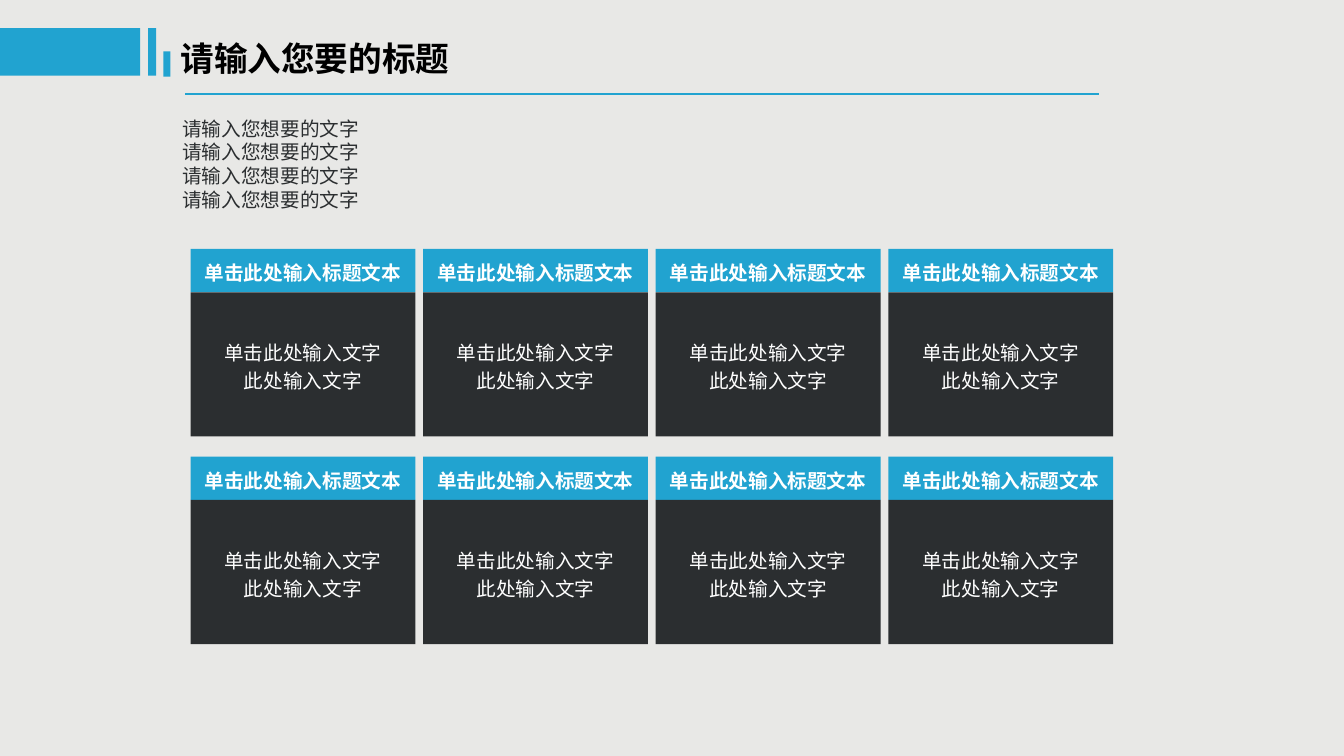
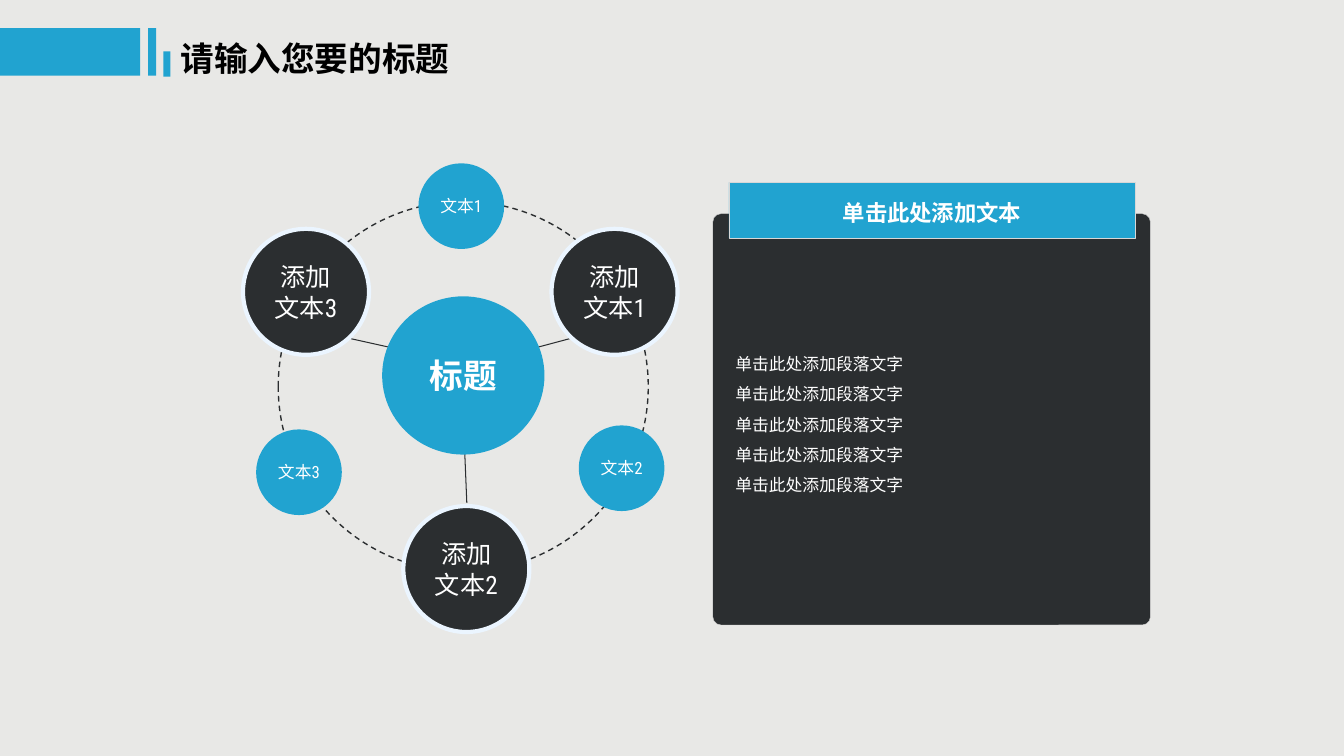
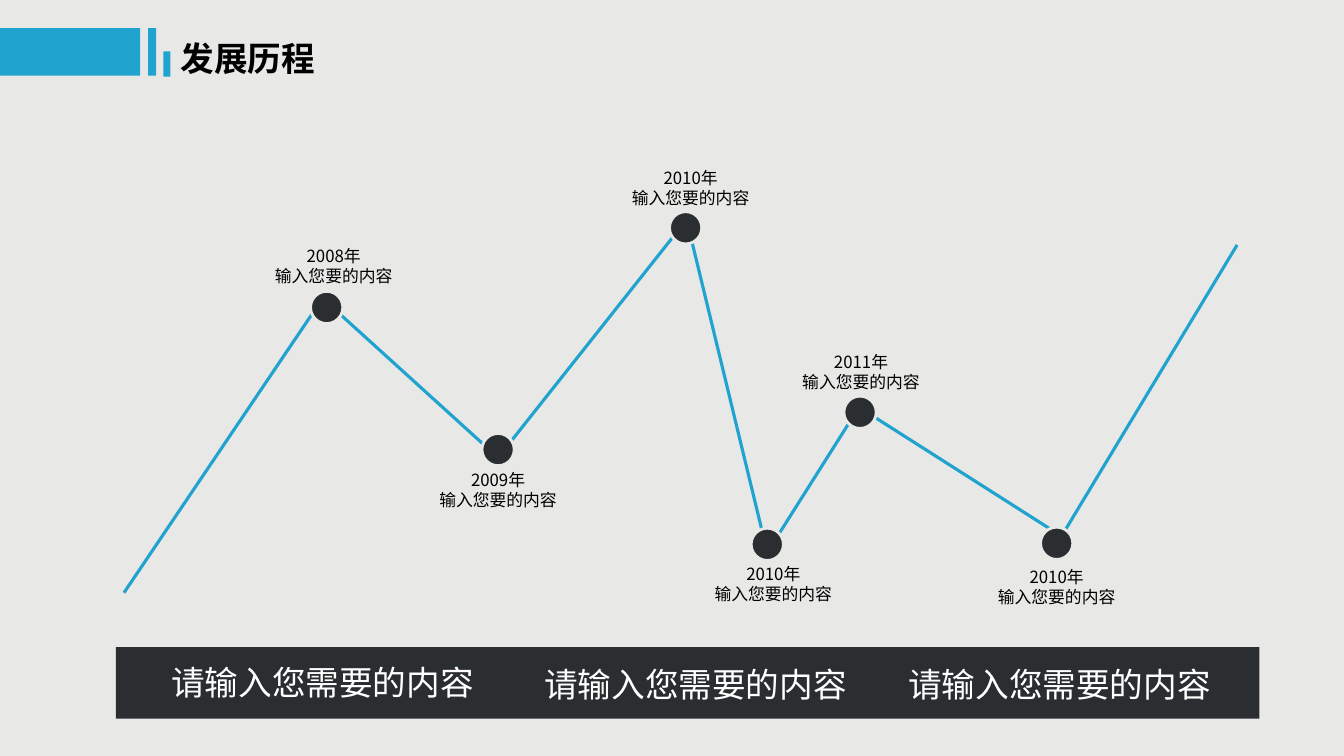
from lxml.etree import SubElement
from pptx import Presentation
from pptx.dml.color import RGBColor
from pptx.enum.dml import MSO_LINE
from pptx.enum.shapes import MSO_CONNECTOR, MSO_SHAPE
from pptx.enum.text import MSO_ANCHOR, MSO_AUTO_SIZE, PP_ALIGN
from pptx.oxml.ns import qn
from pptx.util import Inches, Pt

BLUE = RGBColor(0x21, 0xA3, 0xD0)
DARK = RGBColor(0x2B, 0x2E, 0x30)
PALE = RGBColor(0xE8, 0xE8, 0xE6)
RING = RGBColor(0xEB, 0xF5, 0xFF)
EDGE = RGBColor(0xD7, 0xD7, 0xD7)
WHITE = RGBColor(0xFF, 0xFF, 0xFF)
BLACK = RGBColor(0, 0, 0)
NOTO = "Noto Sans CJK SC"
ROBOTO = "Roboto Condensed"
RECT, ROUND, OVAL = MSO_SHAPE.RECTANGLE, MSO_SHAPE.ROUNDED_RECTANGLE, MSO_SHAPE.OVAL


def write(shape, text, size=14, color=WHITE, bold=False, font=NOTO,
          align=PP_ALIGN.CENTER, anchor=MSO_ANCHOR.MIDDLE, space=1.0, wrap=True):
    """Fill a shape with text, one paragraph a line."""
    frame = shape.text_frame
    frame.word_wrap = wrap
    frame.auto_size = MSO_AUTO_SIZE.NONE
    frame.vertical_anchor = anchor
    frame.text = text
    for para in frame.paragraphs:
        para.alignment = align
        para.line_spacing = space
        for run in para.runs:
            run.font.name = font
            run.font.size = Pt(size)
            run.font.bold = bold
            run.font.color.rgb = color
            SubElement(run.font._element, qn("a:ea"), typeface=NOTO)


def draw(slide, kind, box, fill=None, line=None, width=1):
    """Add a flat shape at box (left, top, width, height in inches)."""
    shape = slide.shapes.add_shape(kind, *map(Inches, box))
    shape.shadow.inherit = False
    if fill is None:
        shape.fill.background()
    else:
        shape.fill.solid()
        shape.fill.fore_color.rgb = fill
    if line is None:
        shape.line.fill.background()
    else:
        shape.line.color.rgb = line
        shape.line.width = Pt(width)
    return shape


deck = Presentation()
deck.slide_width, deck.slide_height = Inches(13.33), Inches(7.5)
back = deck.slide_master.background.fill
back.solid()
back.fore_color.rgb = PALE

# Title and blue bars on every slide
bars = [(0, 0.28, 1.39, 0.47), (1.47, 0.28, 0.08, 0.47), (1.62, 0.51, 0.07, 0.25)]
for head in ("请输入您要的标题", "请输入您要的标题", "发展历程"):
    slide = deck.slides.add_slide(deck.slide_layouts[5])
    title = slide.shapes.title
    title.left, title.top = Inches(1.69), Inches(0.33)
    title.width, title.height = Inches(3.01), Inches(0.5)
    write(title, head, size=24, color=BLACK, bold=True,
          align=PP_ALIGN.LEFT, anchor=MSO_ANCHOR.TOP)
    for bar in bars:
        draw(slide, RECT, bar, BLUE)
cards, wheel, course = deck.slides

# Slide 1: rule, introduction and grid of cards
rules = [(cards, (1.84, 0.93), (10.9, 0.93), BLUE, 1.5)]
intro = cards.shapes.add_textbox(Inches(1.71), Inches(1.11), Inches(2), Inches(1.28))
phrase = "请输入您想要的文字"
write(intro, "\n".join([phrase * 2, phrase, phrase]), color=DARK,
      align=PP_ALIGN.LEFT, anchor=MSO_ANCHOR.TOP)
for row in range(2):
    for col in range(4):
        left, top = 1.89 + 2.307 * col, 2.47 + 2.06 * row
        label = draw(cards, RECT, (left, top, 2.23, 0.43), BLUE)
        write(label, "单击此处输入标题文本", bold=True, space=1.2)
        body = draw(cards, RECT, (left, top + 0.43, 2.23, 1.43), DARK)
        write(body, "单击此处输入文字\n此处输入文字", space=1.2)

# Slide 2: wheel of circles
orbit = draw(wheel, OVAL, (2.76, 2, 3.67, 3.67), line=DARK)
orbit.line.dash_style = MSO_LINE.DASH
for num, left, top in ((3, 2.41, 2.27), (1, 5.47, 2.27), (2, 4, 5.02)):
    disc = draw(wheel, OVAL, (left, top, 1.25, 1.25), DARK, RING, 3)
    write(disc, f"添加文本{num}", size=18, font=ROBOTO)
for num, left, top in ((1, 4.15, 1.62), (2, 5.74, 4.22), (3, 2.54, 4.26)):
    disc = draw(wheel, OVAL, (left, top, 0.85, 0.85), BLUE)
    write(disc, f"文本{num}", size=12, font=ROBOTO, wrap=False)
hub = draw(wheel, OVAL, (3.79, 2.94, 1.61, 1.57), BLUE)
write(hub, "标题", size=24, bold=True, font=ROBOTO, wrap=False)
for start, end in (((4.63, 4.99), (4.61, 4.5)), ((5.65, 3.36), (5.2, 3.48)),
                   ((3.48, 3.36), (4.02, 3.48))):
    rules.append((wheel, start, end, DARK, 0.75))

# Slide 2: text panel
panel = draw(wheel, ROUND, (7.07, 2.12, 4.34, 4.08), DARK, EDGE, 0.25)
panel.adjustments[0] = 0.02
panel.text_frame.margin_left = Inches(0.2)
write(panel, "\n".join(["单击此处添加段落文字"] * 5), size=12,
      align=PP_ALIGN.LEFT, space=1.5)
banner = draw(wheel, RECT, (7.23, 1.81, 4.03, 0.55), BLUE, EDGE, 0.25)
write(banner, "单击此处添加文本", size=16, bold=True, space=1.2)

# Slide 3: zigzag course
turns = [(1.23, 5.88), (3.2, 2.96), (4.94, 4.54), (6.81, 2.18),
         (7.61, 5.48), (8.52, 4.04), (10.42, 5.25)]
legs = list(zip(turns, turns[1:])) + [((10.42, 5.5), (12.27, 2.43))]
for start, end in legs:
    rules.append((course, start, end, BLUE, 2.25))

# All straight lines, placed beneath the shapes
for slide, start, end, color, width in rules:
    line = slide.shapes.add_connector(MSO_CONNECTOR.STRAIGHT, *map(Inches, start + end))
    line.line.color.rgb = color
    line.line.width = Pt(width)
    SubElement(line._element.spPr, qn("a:effectLst"))
    slide.shapes._spTree.insert(2, line._element)

# Slide 3: dots with their years
stops = [("2008", 3.08, 2.89, 2.07, 2.39), ("2009", 4.78, 4.3, 3.7, 4.61),
         ("2010", 6.64, 2.1, 5.61, 1.61), ("2010", 7.45, 5.24, 6.43, 5.54),
         ("2011", 8.37, 3.93, 7.3, 3.44), ("2010", 10.32, 5.23, 9.24, 5.57)]
for year, left, top, x, y in stops:
    draw(course, OVAL, (left, top, 0.32, 0.32), DARK, PALE, 2)
    note = course.shapes.add_textbox(Inches(x), Inches(y), Inches(2.48), Inches(0.51))
    write(note, f"{year}年\n输入您要的内容", size=12, color=BLACK, anchor=MSO_ANCHOR.TOP)

# Slide 3: bottom band
draw(course, RECT, (1.15, 6.42, 11.34, 0.71), DARK)
for left, top in ((1.6, 6.52), (5.3, 6.54), (8.91, 6.54)):
    note = course.shapes.add_textbox(Inches(left), Inches(top), Inches(3.5), Inches(0.51))
    write(note, "请输入您需要的内容", size=24, align=PP_ALIGN.LEFT, anchor=MSO_ANCHOR.TOP)

deck.save("out.pptx")
